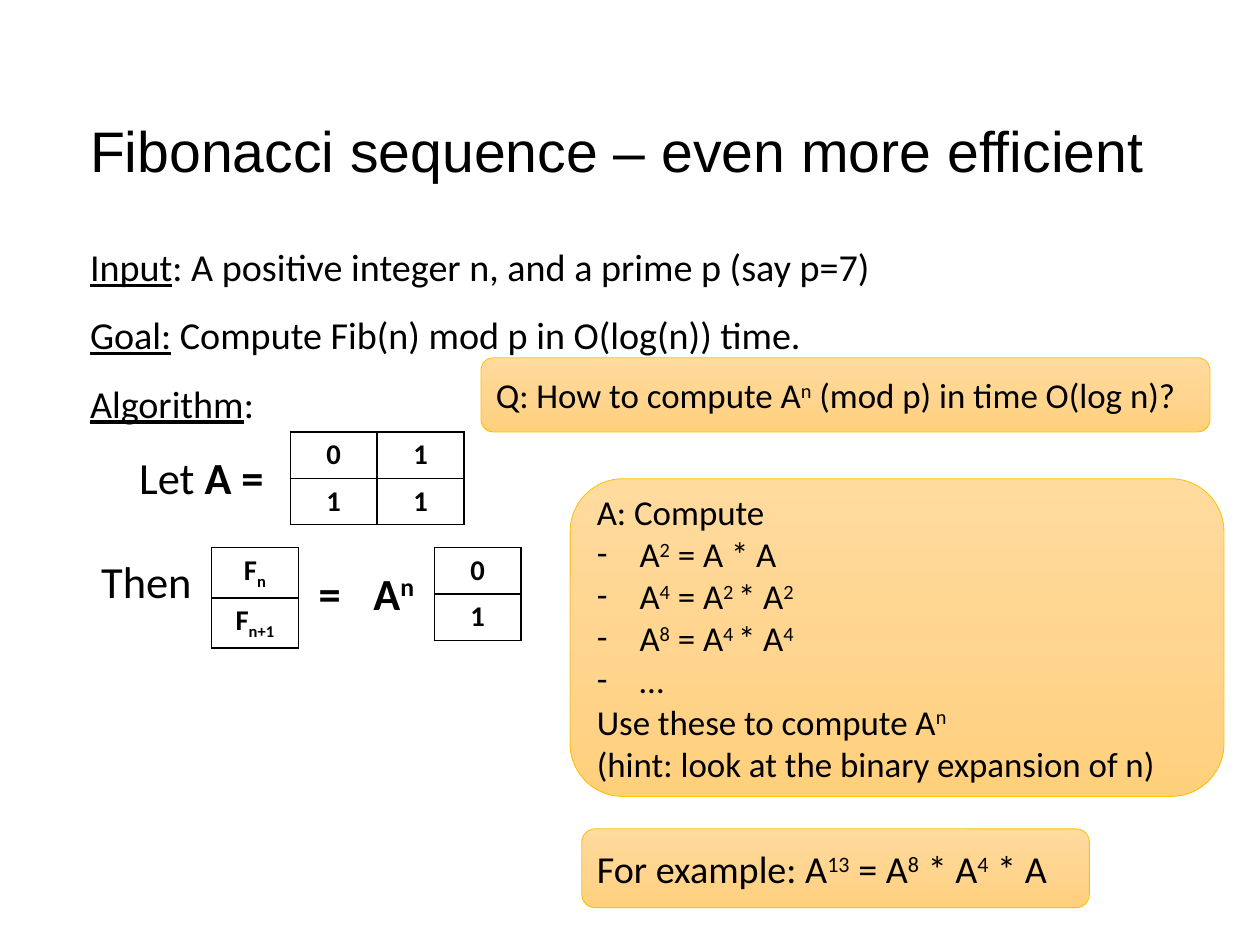
"""Build the slide on computing Fibonacci numbers with matrix powers."""
from copy import deepcopy
from dataclasses import dataclass
from typing import NamedTuple

from lxml.etree import SubElement
from pptx import Presentation
from pptx.dml.color import RGBColor as Rgb
from pptx.enum.shapes import MSO_SHAPE as Shape
from pptx.enum.text import MSO_ANCHOR as Anchor, MSO_AUTO_SIZE as AutoSize, PP_ALIGN as Align
from pptx.oxml.ns import qn
from pptx.util import Cm, Pt


@dataclass(frozen=True)
class Theme:
    ink: Rgb = Rgb(0, 0, 0)
    card_edge: Rgb = Rgb(0xFF, 0xC0, 0x00)
    card_stops: tuple = ((0, "FFDB9E"), (0.5, "FFD590"), (1, "FFD07C"))
    heading_font: str = "Arial"
    text_font: str = "Calibri"
    title: int = 36
    formula: int = 28
    body: int = 24
    card: int = 22
    cell: int = 18


THEME = Theme()


class Box(NamedTuple):
    left: float
    top: float
    width: float
    height: float

    def lengths(self) -> list:
        return [Cm(value) for value in self]


class Run(NamedTuple):
    text: str
    baseline: int = 0
    bold: bool = False
    underline: bool = False


@dataclass(frozen=True)
class Line:
    runs: tuple
    dashed: bool = False


@dataclass(frozen=True)
class Card:
    box: Box
    lines: tuple
    size: int = THEME.card


@dataclass(frozen=True)
class Matrix:
    left: float
    top: float
    rows: tuple


@dataclass(frozen=True)
class Formula:
    box: Box
    line: Line
    wrap: bool = True


def line(*parts, dashed: bool = False) -> Line:
    """Make a line from plain strings and runs."""
    return Line(tuple(Run(part) if isinstance(part, str) else part for part in parts), dashed)


def sup(text: str, bold: bool = False) -> Run:
    """Make a superscript run."""
    return Run(text, 30, bold)


def sub(text: str) -> Run:
    """Make a subscript run."""
    return Run(text, -25)


def bold(text: str) -> Run:
    """Make a bold run."""
    return Run(text, bold=True)


def term(text: str) -> Run:
    """Make an underlined run."""
    return Run(text, underline=True)


CELL_SIDE = Cm(1.93)
ROW_HEIGHT = Cm(1.02)
DASH_INDENT = Cm(0.95)

TITLE_BOX = Box(2, 1.9, 23.5, 2.84)
BODY_BOX = Box(2, 5.41, 24.59, 14.02)
PROBLEM = (
    line(term("Input"), ": A positive integer n, and a prime p (say p=7)"),
    line(term("Goal:"), " Compute Fib(n) mod p in O(log(n)) time."),
    line(term("Algorithm"), ":"),
)
CARDS = (
    Card(Box(10.69, 7.95, 16.2, 1.65),
         (line("Q: How to compute A", sup("n"), " (mod p) in time O(log n)?"),)),
    Card(Box(12.67, 10.64, 14.53, 7.06), (
        line("A: Compute"),
        line("A", sup("2"), " = A * A", dashed=True),
        line("A", sup("4"), " = A", sup("2 "), "* A", sup("2"), dashed=True),
        line("A", sup("8"), " = A", sup("4 "), "* A", sup("4"), dashed=True),
        line("…", dashed=True),
        line("Use these to compute A", sup("n")),
        line("(hint: look at the binary expansion of n)"),
    )),
    Card(Box(12.93, 18.42, 11.28, 1.75),
         (line("For example: A", sup("13"), " = A", sup("8"), " * A", sup("4"), " * A"),),
         THEME.body),
)
MATRICES = (
    Matrix(6.45, 9.6, ((line("0"), line("1")), (line("1"), line("1")))),
    Matrix(9.65, 12.17, ((line("0"),), (line("1"),))),
    Matrix(4.7, 12.17, ((line("F", sub("n")),), (line("F", sub("n+1")),))),
)
FORMULAS = (
    Formula(Box(2.62, 9.88, 5.31, 1.45), line(" Let ", bold("A ="))),
    Formula(Box(2, 12.19, 4.37, 1.45), line("Then")),
    Formula(Box(6.83, 12.45, 1.24, 1.45), line(bold("=")), wrap=False),
    Formula(Box(8.05, 12.45, 1.47, 1.45), line(bold("A"), sup("n", bold=True)), wrap=False),
)


def write(frame, lines: tuple, *, size: int, font: str = THEME.text_font, align=Align.LEFT,
          all_bold: bool = False, after: float = 0) -> None:
    """Fill a text frame with formatted lines."""
    for index, entry in enumerate(lines):
        paragraph = frame.paragraphs[0] if index == 0 else frame.add_paragraph()
        paragraph.alignment = align
        paragraph.space_before, paragraph.space_after = Pt(0), Pt(after)
        props = paragraph._p.get_or_add_pPr()
        indent = DASH_INDENT if entry.dashed else 0
        props.set("marL", str(indent))
        props.set("indent", str(-indent))
        if entry.dashed:
            SubElement(props, qn("a:buFont")).set("typeface", font)
            SubElement(props, qn("a:buChar")).set("char", "-")
        else:
            SubElement(props, qn("a:buNone"))
        for part in entry.runs:
            run = paragraph.add_run()
            run.text = part.text
            run.font.name, run.font.size = font, Pt(size)
            run.font.color.rgb = THEME.ink
            run.font.bold = all_bold or part.bold
            run.font.underline = part.underline
            if part.baseline:
                run.font._element.set("baseline", str(part.baseline * 1000))


def place_text(holder, box: Box, lines: tuple, *, anchor, **text_format) -> None:
    """Move a placeholder, clear its insets and write its text."""
    holder.left, holder.top, holder.width, holder.height = box.lengths()
    frame = holder.text_frame
    frame.margin_left = frame.margin_right = frame.margin_top = frame.margin_bottom = 0
    frame.auto_size, frame.vertical_anchor = AutoSize.NONE, anchor
    write(frame, lines, **text_format)


def draw_card(shapes, card: Card) -> None:
    """Draw a rounded card with a three-step gradient."""
    shape = shapes.add_shape(Shape.ROUNDED_RECTANGLE, *card.box.lengths())
    shape.shadow.inherit = False
    shape.fill.gradient()
    shape.fill.gradient_angle = 270
    stop_list = shape._element.spPr.find(".//" + qn("a:gsLst"))
    stop_list.insert(1, deepcopy(stop_list[0]))
    for stop, (position, colour) in zip(shape.fill.gradient_stops, THEME.card_stops):
        stop.position, stop.color.rgb = position, Rgb.from_string(colour)
    shape.line.color.rgb, shape.line.width = THEME.card_edge, Pt(0.5)
    shape.text_frame.word_wrap, shape.text_frame.vertical_anchor = True, Anchor.MIDDLE
    write(shape.text_frame, card.lines, size=card.size)


def draw_matrix(shapes, matrix: Matrix) -> None:
    """Draw a matrix as a bordered table."""
    rows, columns = len(matrix.rows), len(matrix.rows[0])
    table = shapes.add_table(rows, columns, Cm(matrix.left), Cm(matrix.top),
                             CELL_SIDE * columns, ROW_HEIGHT * rows).table
    table.first_row = table.horz_banding = False
    for cell, entry in zip(table.iter_cells(), (entry for row in matrix.rows for entry in row)):
        props = cell._tc.get_or_add_tcPr()
        for side in ("a:lnL", "a:lnR", "a:lnT", "a:lnB"):
            border = SubElement(props, qn(side), w=str(Pt(1)))
            SubElement(SubElement(border, qn("a:solidFill")), qn("a:srgbClr"), val=str(THEME.ink))
        cell.fill.background()
        write(cell.text_frame, (entry,), size=THEME.cell, align=Align.CENTER, all_bold=True)


def draw_formula(shapes, formula: Formula) -> None:
    """Draw a piece of formula text beside the matrices."""
    frame = shapes.add_textbox(*formula.box.lengths()).text_frame
    frame.word_wrap, frame.auto_size = formula.wrap, AutoSize.SHAPE_TO_FIT_TEXT
    write(frame, (formula.line,), size=THEME.formula)


def main() -> None:
    """Build and save the slide."""
    deck = Presentation()
    deck.slide_width, deck.slide_height = Cm(28), Cm(21)
    slide = deck.slides.add_slide(deck.slide_layouts[1])
    place_text(slide.shapes.title, TITLE_BOX, (line("Fibonacci sequence – even more efficient"),),
               anchor=Anchor.MIDDLE, size=THEME.title, font=THEME.heading_font)
    place_text(slide.placeholders[1], BODY_BOX, PROBLEM,
               anchor=Anchor.TOP, size=THEME.body, after=14.2)
    for draw, parts in ((draw_card, CARDS), (draw_matrix, MATRICES), (draw_formula, FORMULAS)):
        for part in parts:
            draw(slide.shapes, part)
    deck.save("out.pptx")


if __name__ == "__main__":
    main()
